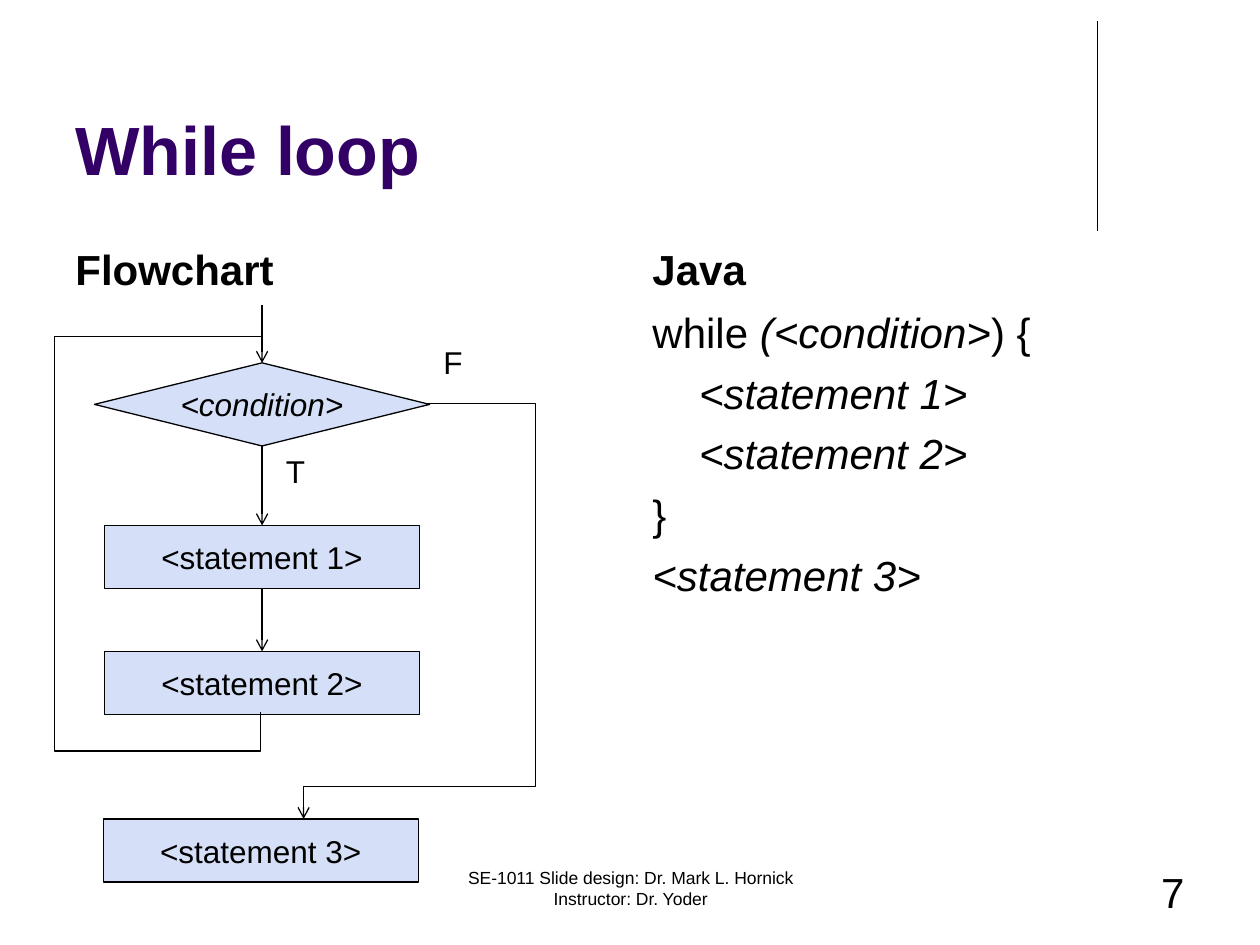
"""Build the While loop slide: a flowchart beside its Java form."""
from typing import NamedTuple

from lxml import etree
from pptx import Presentation
from pptx import util as u
from pptx.dml.color import RGBColor
from pptx.enum import shapes, text
from pptx.oxml.ns import qn

COLORS = {"ink": "000000", "title": "330066", "node": "D5DFF7"}
SHAPE = shapes.MSO_SHAPE
ALIGN = text.PP_ALIGN
ANCHOR = text.MSO_ANCHOR


class Node(NamedTuple):
    label: str
    x: float
    y: float
    w: float = 2.5
    h: float = 0.5
    kind: SHAPE = SHAPE.RECTANGLE
    italic: bool = False


class Label(NamedTuple):
    lines: list
    x: float
    y: float
    w: float
    h: float
    style: dict
    wrap: bool = True


class Route(NamedTuple):
    points: list
    arrow: bool


def color(name: str) -> RGBColor:
    return RGBColor.from_string(COLORS[name])


def write(sp, lines, *, size=18, bold=False, ink="ink", align=ALIGN.LEFT,
          anchor=ANCHOR.TOP, wrap=False, gap=0) -> None:
    tf = sp.text_frame
    tf.word_wrap = wrap
    tf.vertical_anchor = anchor
    for i, runs in enumerate(lines):
        p = tf.add_paragraph() if i else tf.paragraphs[0]
        p.alignment = align
        p.space_before = u.Pt(gap if i else 0)
        for value, italic in runs:
            r = p.add_run()
            r.text = value
            r.font.name = "Arial"
            r.font.size = u.Pt(size)
            r.font.bold = bold
            r.font.italic = italic
            r.font.color.rgb = color(ink)


def outline(sp, arrow: bool = False) -> None:
    sp.line.color.rgb = color("ink")
    sp.line.width = u.Pt(0.75)
    if arrow:
        etree.SubElement(sp.line._get_or_add_ln(), qn("a:tailEnd"), type="arrow")


def add_label(s, label: Label) -> None:
    sp = s.shapes.add_textbox(*map(u.Inches, label[1:5]))
    write(sp, label.lines, wrap=label.wrap, **label.style)


def add_node(s, node: Node):
    sp = s.shapes.add_shape(node.kind, *map(u.Inches, node[1:5]))
    sp.shadow.inherit = False
    sp.fill.solid()
    sp.fill.fore_color.rgb = color("node")
    outline(sp)
    write(sp, [[(node.label, node.italic)]], align=ALIGN.CENTER, anchor=ANCHOR.MIDDLE)
    return sp


def add_line(s, x: float, top: float, bottom: float, arrow: bool = True,
             start=None, end=None) -> None:
    sp = s.shapes.add_connector(shapes.MSO_CONNECTOR.STRAIGHT,
                                *map(u.Inches, (x, top, x, bottom)))
    if start is not None:
        sp.begin_connect(start, 2)
    if end is not None:
        sp.end_connect(end, 0)
    outline(sp, arrow)
    etree.SubElement(sp._element.spPr, qn("a:effectLst"))


def add_route(s, route: Route) -> None:
    first, *rest = [(u.Inches(x), u.Inches(y)) for x, y in route.points]
    builder = s.shapes.build_freeform(*first)
    builder.add_line_segments(rest, close=False)
    sp = builder.convert_to_shape()
    sp.shadow.inherit = False
    sp.fill.background()
    outline(sp, route.arrow)


HEADING = dict(size=24, bold=True, anchor=ANCHOR.BOTTOM)
CODE = [
    [("while ", False), ("(<condition>", True), (") {", False)],
    [("    <statement 1>", True)],
    [("    <statement 2>", True)],
    [("}", False)],
    [("<statement 3>", True)],
]
FOOTER = "SE-1011 Slide design: Dr. Mark L. Hornick Instructor: Dr. Yoder"
LABELS = [
    Label([[("While loop", False)]], 0.5, 0.3, 9, 1.25,
          dict(size=39, bold=True, ink="title", anchor=ANCHOR.BOTTOM)),
    Label([[("Flowchart", False)]], 0.5, 1.68, 4.42, 0.7, HEADING),
    Label([[("Java", False)]], 5.08, 1.68, 4.42, 0.7, HEADING),
    Label(CODE, 5.08, 2.38, 4.42, 4.32, dict(size=24, gap=6)),
    Label([[(FOOTER, False)]], 3.42, 6.83, 3.17, 0.5, dict(size=10, align=ALIGN.CENTER)),
    Label([[("7", False)]], 7.17, 6.83, 2.33, 0.5, dict(size=24, align=ALIGN.RIGHT)),
    Label([[("T", False)]], 2.17, 3.54, 0.36, 0.4, {}, False),
    Label([[("F", False)]], 3.42, 2.67, 0.36, 0.4, {}, False),
]
NODES = [
    Node("<condition>", 0.75, 2.88, 2.66, 0.66, SHAPE.FLOWCHART_DECISION, True),
    Node("<statement 1>", 0.83, 4.17),
    Node("<statement 2>", 0.83, 5.17),
    Node("<statement 3>", 0.82, 6.5),
]
ROUTES = [
    Route([(3.39, 3.2), (4.25, 3.2), (4.25, 6.24), (2.41, 6.24), (2.41, 6.5)], True),
    Route([(2.07, 5.65), (2.07, 5.96), (0.43, 5.96), (0.43, 2.67), (2.08, 2.67)], False),
]


def main() -> None:
    prs = Presentation()
    prs.slide_width, prs.slide_height = u.Inches(10), u.Inches(7.5)
    s = prs.slides.add_slide(prs.slide_layouts[6])
    add_line(s, 8.71, 0.17, 1.83, arrow=False)
    for label in LABELS:
        add_label(s, label)
    condition, first, second, _ = [add_node(s, node) for node in NODES]
    add_line(s, 2.08, 2.42, 2.88, end=condition)
    add_line(s, 2.08, 3.54, 4.17, start=condition, end=first)
    add_line(s, 2.08, 4.67, 5.17, start=first, end=second)
    for route in ROUTES:
        add_route(s, route)
    prs.save("out.pptx")


if __name__ == "__main__":
    main()
